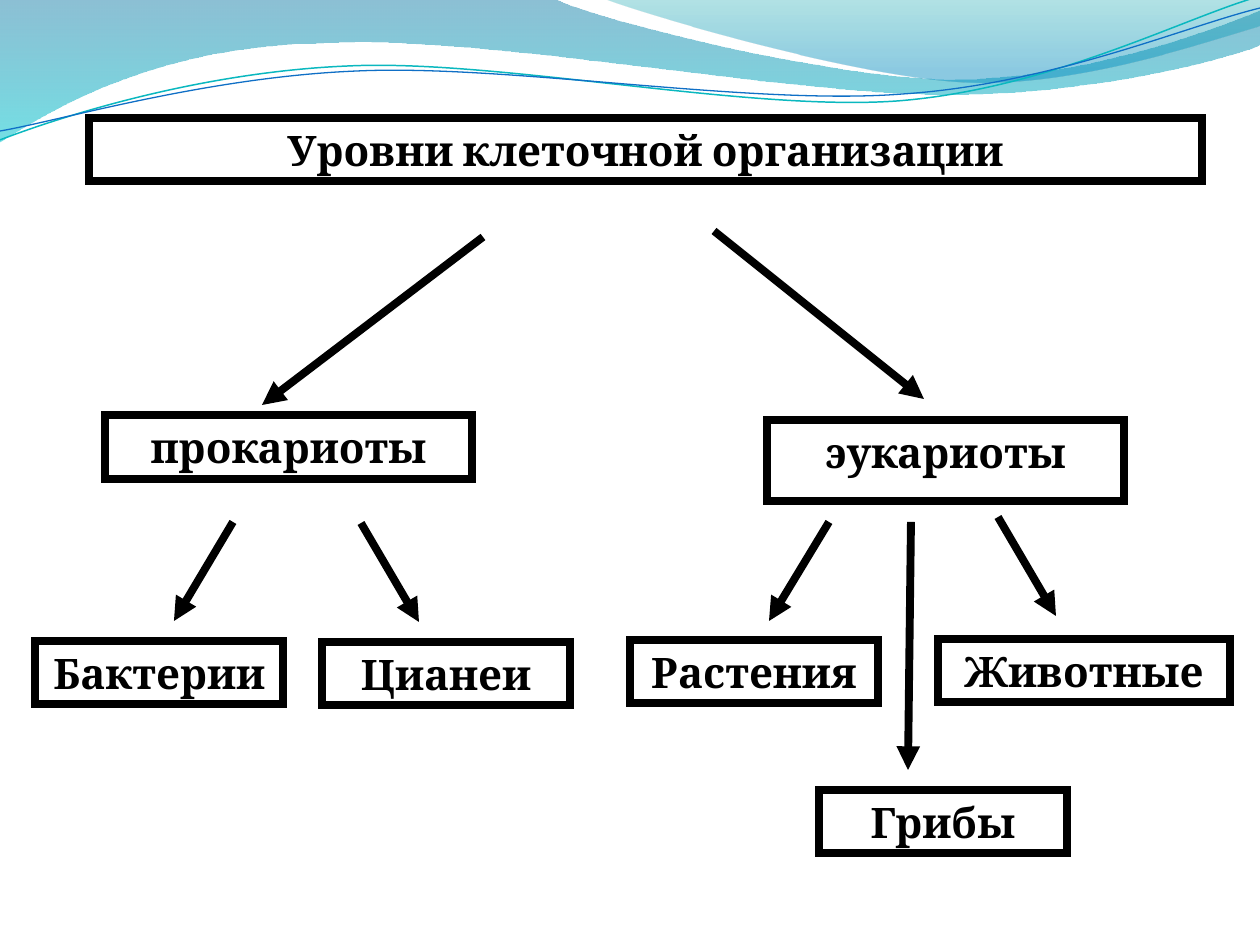
from dataclasses import dataclass
from math import cos, radians, sin

from lxml.etree import SubElement
from pptx import Presentation
from pptx.dml.color import RGBColor
from pptx.enum.shapes import MSO_CONNECTOR, MSO_SHAPE
from pptx.enum.text import MSO_ANCHOR, MSO_AUTO_SIZE, PP_ALIGN
from pptx.oxml.ns import qn
from pptx.util import Emu, Pt

EMU_PER_PX = 914400 / 126
STRAND_TILT = -2.7


@dataclass(frozen=True)
class Theme:
    """Colours, font and sizes of the slide."""
    ink: str = "000000"
    font: str = "Cambria"
    text_size: float = 24
    line_width: float = 4.5
    wide_wave: tuple = ((0, "0074A1", 45), (1, "00C6CF", 55))
    corner_wave: tuple = ((0, "00A1A9", 30), (0.8, "008BBF", 45))
    teal_strand: tuple = ("0AB8BF", 0.85)
    blue_strand: tuple = ("0F6FC6", 0.75)


THEME = Theme()

WIDE_WAVE = [
    (0, 0), (554, -1),
    (600, 21, 837, 79, 955, 79), (1074, 79, 1207, 33, 1260, 11),
    (1261, 45),
    (1239, 55, 1096, 96, 940, 94), (784, 94, 481, 35, 324, 43),
    (163, 45, 58, 105, -1, 142), (0, 0),
]
CORNER_WAVE = [
    (604, -1),
    (641, 14, 859, 78, 969, 82), (1079, 86, 1211, 40, 1260, 26),
    (1260, 0), (604, -1),
]
TEAL_STRAND = [
    (0, 140),
    (60, 117, 199, 72, 349, 66), (498, 59, 747, 112, 898, 101),
    (1049, 89, 1182, 19, 1257, -3),
]
BLUE_STRAND = [
    (0, 131),
    (59, 121, 207, 77, 357, 71), (508, 64, 752, 106, 903, 94),
    (1053, 84, 1186, 26, 1260, 8),
]
STRAND_CENTER = (629, 73)

BOXES = [
    ("Уровни клеточной организации", 89, 118, 1113, 63, True),
    ("прокариоты", 105, 415, 367, 64, True),
    ("эукариоты", 767, 420, 357, 81, False),
    ("Бактерии", 35, 641, 248, 63, True),
    ("Цианеи", 322, 642, 248, 63, True),
    ("Растения", 630, 640, 248, 63, True),
    ("Грибы", 819, 790, 248, 63, True),
    ("Животные", 938, 639, 292, 63, True),
]
ARROWS = [
    (483, 237, 262, 405),
    (714, 231, 924, 399),
    (233, 522, 174, 621),
    (361, 523, 419, 622),
    (829, 522, 769, 621),
    (998, 517, 1056, 616),
    (911, 522, 908, 770),
]


def px(length):
    """Turn pixels into EMU."""
    return Emu(round(length * EMU_PER_PX))


def style_line(line, color, width):
    """Give a line its solid colour and its width in points."""
    line.color.rgb = RGBColor.from_string(color)
    line.width = Pt(width)


def miter_corners(shape):
    """Give the outline of a shape sharp corners."""
    SubElement(shape.element.spPr.find(qn("a:ln")), qn("a:miter"), lim="800000")


def turn(point, center, degrees):
    """Turn a point clockwise about a center."""
    x, y = point[0] - center[0], point[1] - center[1]
    angle = radians(degrees)
    return (center[0] + x * cos(angle) - y * sin(angle),
            center[1] + x * sin(angle) + y * cos(angle))


def add_outline(slide, segments, close, tilt=0):
    """Add a freeform of straight and cubic segments, tilted as a whole."""
    points = [turn(pair, STRAND_CENTER, -tilt)
              for segment in segments
              for pair in zip(segment[::2], segment[1::2])]
    points = [(px(x), px(y)) for x, y in points]
    builder = slide.shapes.build_freeform(*points[0])
    builder.add_line_segments(points[1:], close=close)
    shape = builder.convert_to_shape()
    shape.shadow.inherit = False
    shape.rotation = tilt
    outline = next(shape.element.iter(qn("a:path")))
    steps = iter(outline.findall(qn("a:lnTo")))
    for segment in segments[1:]:
        step = next(steps)
        if len(segment) == 6:
            curve = SubElement(outline, qn("a:cubicBezTo"))
            step.addprevious(curve)
            for corner in (step, next(steps), next(steps)):
                curve.append(corner[0])
                outline.remove(corner)
    return shape


def add_wave(slide, segments, stops):
    """Add a translucent wave shaded from top to bottom."""
    shape = add_outline(slide, segments, True)
    shape.line.fill.background()
    shape.fill.gradient()
    shape.fill.gradient_angle = 270
    for stop, (position, color, _) in zip(shape.fill.gradient_stops, stops):
        stop.position = position
        stop.color.rgb = RGBColor.from_string(color)
    colors = shape.element.spPr.iter(qn("a:srgbClr"))
    for color, (_, _, opacity) in zip(colors, stops):
        SubElement(color, qn("a:alpha"), val=str(opacity * 1000))


def add_strand(slide, segments, color, width):
    """Add a thin open curve."""
    shape = add_outline(slide, segments, False, STRAND_TILT)
    shape.fill.background()
    style_line(shape.line, color, width)


def add_box(slide, text, left, top, width, height, grows):
    """Add a framed box with one centred label."""
    shape = slide.shapes.add_shape(
        MSO_SHAPE.RECTANGLE, px(left), px(top), px(width), px(height))
    shape.shadow.inherit = False
    shape.fill.background()
    style_line(shape.line, THEME.ink, THEME.line_width)
    miter_corners(shape)
    frame = shape.text_frame
    frame.word_wrap = True
    frame.vertical_anchor = MSO_ANCHOR.TOP
    frame.auto_size = MSO_AUTO_SIZE.SHAPE_TO_FIT_TEXT if grows else MSO_AUTO_SIZE.NONE
    paragraph = frame.paragraphs[0]
    paragraph.text = text
    paragraph.alignment = PP_ALIGN.CENTER
    paragraph.font.name = THEME.font
    paragraph.font.size = Pt(THEME.text_size)
    paragraph.font.bold = True
    paragraph.font.color.rgb = RGBColor.from_string(THEME.ink)


def add_arrow(slide, *ends):
    """Add a straight arrow with a triangular head at its end."""
    connector = slide.shapes.add_connector(MSO_CONNECTOR.STRAIGHT, *map(px, ends))
    style_line(connector.line, THEME.ink, THEME.line_width)
    properties = connector.element.spPr
    SubElement(properties.find(qn("a:ln")), qn("a:tailEnd"), type="triangle")
    SubElement(properties, qn("a:effectLst"))


def main():
    """Build the slide and save it."""
    presentation = Presentation()
    presentation.slide_width = px(1260)
    presentation.slide_height = px(945)
    slide = presentation.slides.add_slide(presentation.slide_layouts[6])
    add_wave(slide, WIDE_WAVE, THEME.wide_wave)
    add_wave(slide, CORNER_WAVE, THEME.corner_wave)
    add_strand(slide, TEAL_STRAND, *THEME.teal_strand)
    add_strand(slide, BLUE_STRAND, *THEME.blue_strand)
    for box in BOXES:
        add_box(slide, *box)
    for arrow in ARROWS:
        add_arrow(slide, *arrow)
    presentation.save("out.pptx")


if __name__ == "__main__":
    main()
